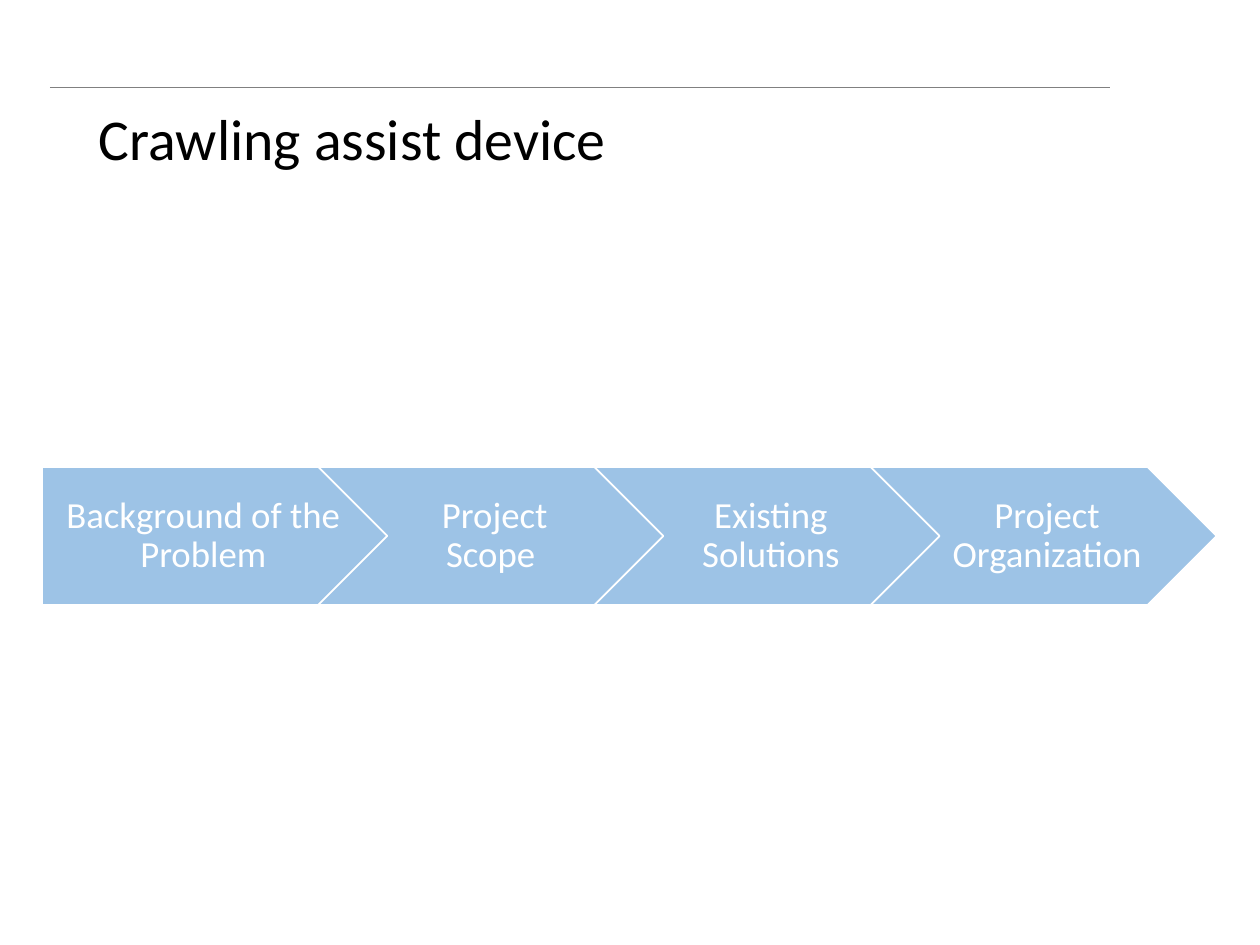
from dataclasses import dataclass

from lxml.etree import SubElement
from pptx import Presentation
from pptx.dml.color import RGBColor
from pptx.enum.shapes import MSO_CONNECTOR, MSO_SHAPE as SHAPE
from pptx.enum.text import MSO_ANCHOR as ANCHOR, PP_ALIGN as ALIGN
from pptx.oxml.ns import qn
from pptx.util import Inches, Pt

TITLE = "Crawling assist device"
STEPS = [
    "Background of the Problem",
    "Project Scope ",
    "Existing Solutions",
    "Project Organization",
]

SCALE = Inches(1) / 126
SLIDE_SIZE = (1260, 945)
TITLE_BOX = (87, 50, 1086, 183)
TITLE_INSETS = (12, 6, 12, 6)
RULE_LEFT, RULE_RIGHT, RULE_TOP = 50, 1110, 87
STEP_LEFT, STEP_TOP, STEP_WIDTH, STEP_HEIGHT = 42, 467, 346, 138
STEP_PITCH = STEP_WIDTH * 4 // 5
FIRST_INSETS = (15, 7, 4, 7)
STEP_INSETS = (11, 7, 4, 7)


@dataclass(frozen=True)
class Theme:
    font: str = "Calibri"
    title_size: float = 33
    step_size: float = 21
    ink: RGBColor = RGBColor(0, 0, 0)
    white: RGBColor = RGBColor(255, 255, 255)
    step_fill: RGBColor = RGBColor(0x9D, 0xC3, 0xE6)
    rule: RGBColor = RGBColor(0x80, 0x80, 0x80)


THEME = Theme()


def px(*values):
    return [round(value * SCALE) for value in values]


def write(shape, text, size, color, alignment, insets):
    frame = shape.text_frame
    frame.word_wrap = True
    frame.vertical_anchor = ANCHOR.MIDDLE
    (frame.margin_left, frame.margin_top,
     frame.margin_right, frame.margin_bottom) = px(*insets)
    paragraph = frame.paragraphs[0]
    paragraph.alignment = alignment
    paragraph.line_spacing = 0.9
    run = paragraph.add_run()
    run.text = text
    run.font.name = THEME.font
    run.font.size = Pt(size)
    run.font.color.rgb = color


def add_rule(slide):
    rule = slide.shapes.add_connector(
        MSO_CONNECTOR.STRAIGHT, *px(RULE_LEFT, RULE_TOP, RULE_RIGHT, RULE_TOP))
    rule.line.color.rgb = THEME.rule
    rule.line.width = Pt(0.25)
    SubElement(rule._element.spPr, qn("a:effectLst"))


def add_step(slide, index, label):
    kind, insets = ((SHAPE.CHEVRON, STEP_INSETS) if index
                    else (SHAPE.PENTAGON, FIRST_INSETS))
    left = STEP_LEFT + index * STEP_PITCH + index * 0.2
    shape = slide.shapes.add_shape(
        kind, *px(left, STEP_TOP, STEP_WIDTH, STEP_HEIGHT))
    shape.shadow.inherit = False
    shape.fill.solid()
    shape.fill.fore_color.rgb = THEME.step_fill
    shape.line.color.rgb = THEME.white
    shape.line.width = Pt(1)
    write(shape, label, THEME.step_size, THEME.white, ALIGN.CENTER, insets)


def main():
    presentation = Presentation()
    presentation.slide_width, presentation.slide_height = px(*SLIDE_SIZE)
    slide = presentation.slides.add_slide(presentation.slide_layouts[6])
    add_rule(slide)
    title = slide.shapes.add_textbox(*px(*TITLE_BOX))
    write(title, TITLE, THEME.title_size, THEME.ink, ALIGN.LEFT, TITLE_INSETS)
    for index, label in enumerate(STEPS):
        add_step(slide, index, label)
    presentation.save("out.pptx")


if __name__ == "__main__":
    main()
